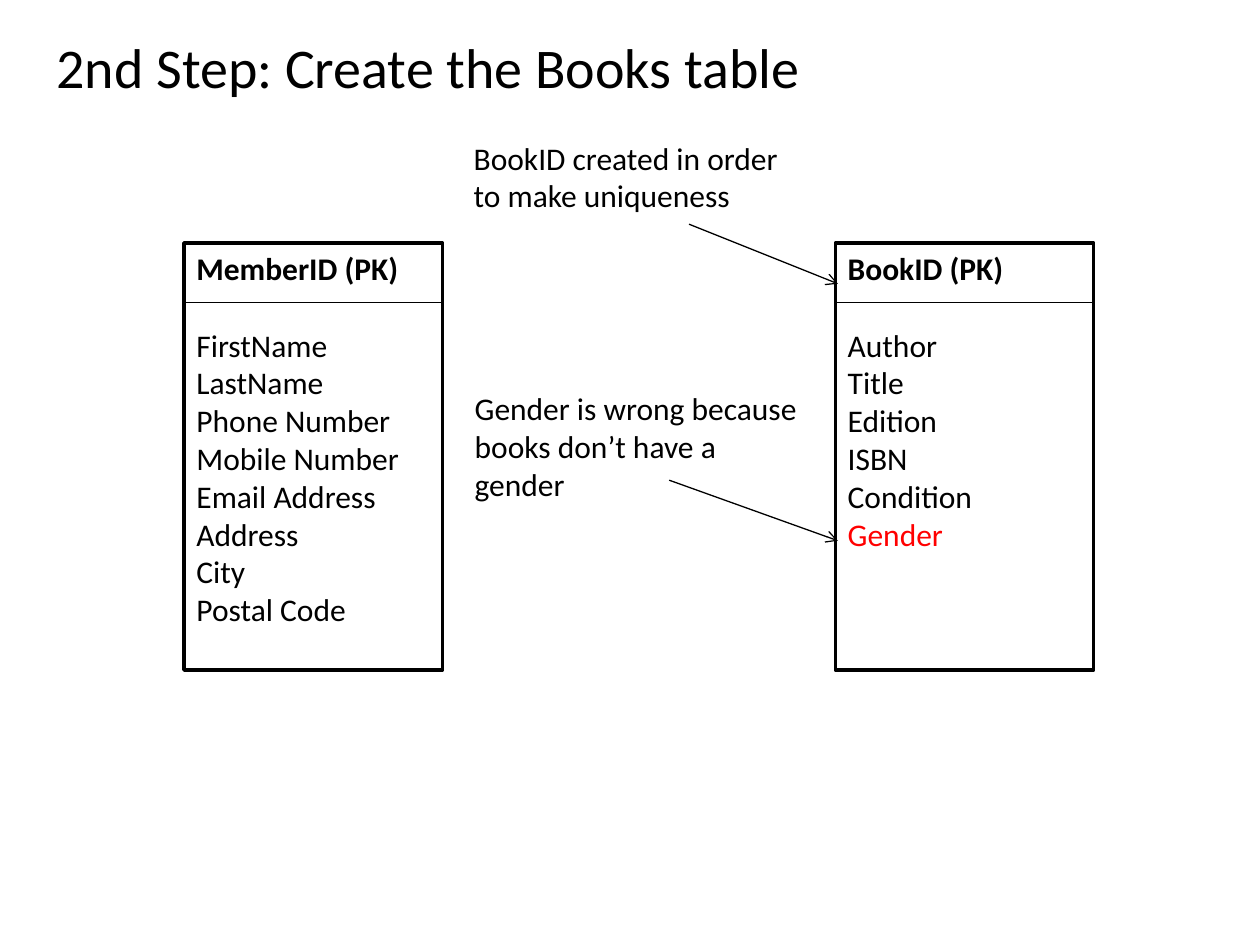
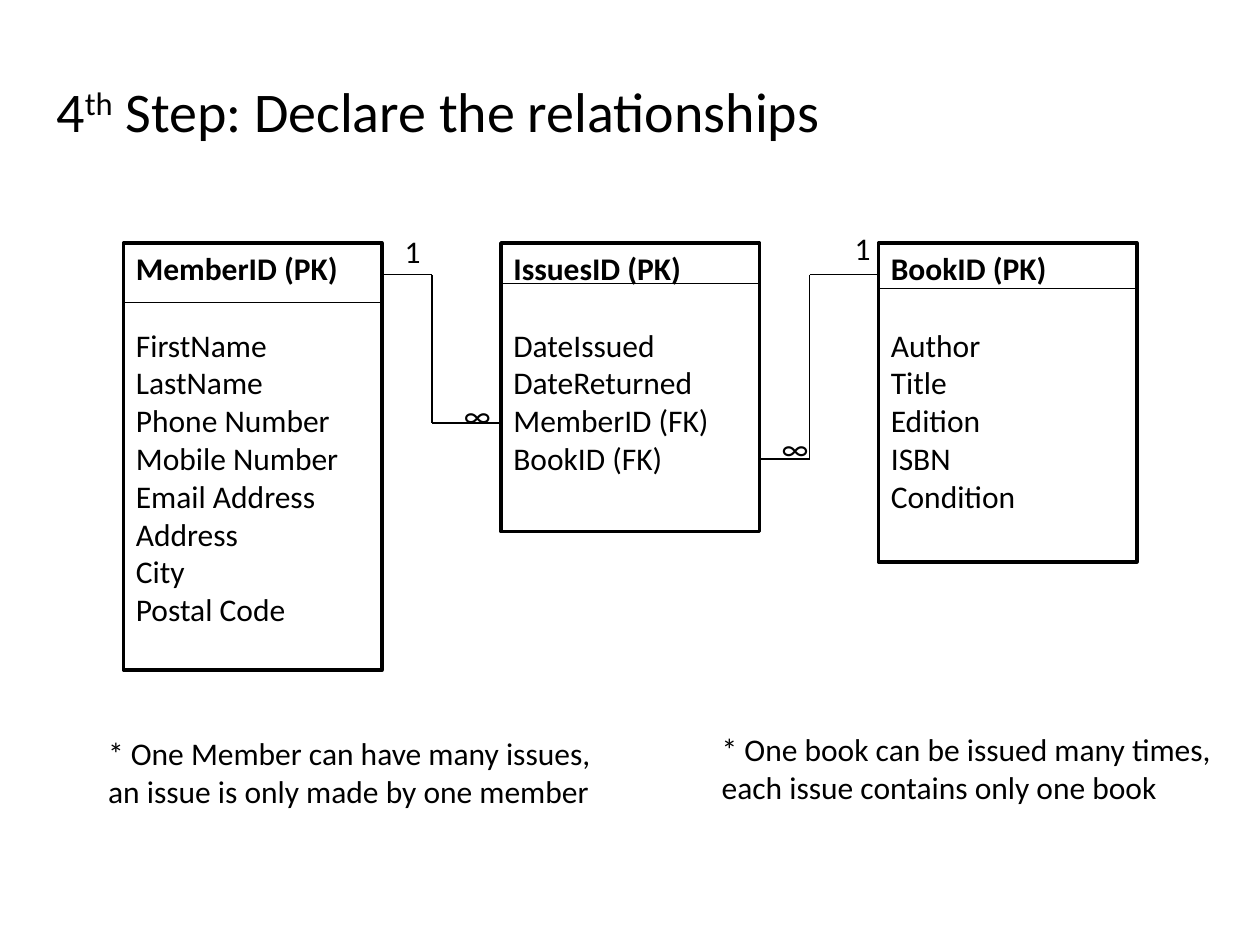
from dataclasses import dataclass
from itertools import pairwise

from lxml.etree import SubElement
from pptx import Presentation
from pptx.dml.color import RGBColor
from pptx.enum.shapes import MSO_CONNECTOR as CONN, MSO_SHAPE as SHAPE
from pptx.enum.text import MSO_ANCHOR as ANCHOR, MSO_AUTO_SIZE as AUTO, PP_ALIGN as ALIGN
from pptx.oxml.ns import qn
from pptx.util import Cm, Pt


@dataclass(frozen=True)
class Theme:
    font: str = "Calibri"
    title: Pt = Pt(32)
    body: Pt = Pt(18)
    blank_line: Pt = Pt(22)
    border: Pt = Pt(2)
    rule: Pt = Pt(0.75)
    ink: RGBColor = RGBColor(0, 0, 0)
    paper: RGBColor = RGBColor(255, 255, 255)
    wrong: RGBColor = RGBColor(255, 0, 0)


THEME = Theme()
ENTITY_TOP, ENTITY_WIDTH = 4.9, 5.21
MEMBER = ["MemberID (PK)", "FirstName", "LastName", "Phone Number", "Mobile Number",
          "Email Address", "Address", "City", "Postal Code"]
ISSUES = ["IssuesID (PK)", "DateIssued", "DateReturned", "MemberID (FK)", "BookID (FK)"]
BOOK = ["BookID (PK)", "Author", "Title", "Edition", "ISBN", "Condition"]


def style(p, size=THEME.body, color=THEME.ink, bold=False):
    p.font.name, p.font.size, p.font.bold = THEME.font, size, bold
    p.font.color.rgb = color


def add_text(slide, text, left, top, width, height):
    tf = slide.shapes.add_textbox(Cm(left), Cm(top), Cm(width), Cm(height)).text_frame
    tf.word_wrap = True
    tf.auto_size = AUTO.SHAPE_TO_FIT_TEXT
    p = tf.paragraphs[0]
    p.text = text
    style(p)


def add_title(slide, top, *parts):
    """Write the title; each part is a text and its superscript offset in percent."""
    tf = slide.shapes.add_textbox(Cm(0.89), Cm(top), Cm(22.86), Cm(2)).text_frame
    tf.word_wrap = True
    p = tf.paragraphs[0]
    for text, raised in parts:
        r = p.add_run()
        r.text = text
        if raised:
            r._r.get_or_add_rPr().set("baseline", str(raised * 1000))
    style(p, THEME.title)


def add_line(shapes, start, end, arrow=False):
    line = shapes.add_connector(CONN.STRAIGHT, *map(Cm, (*start, *end)))
    line.line.color.rgb, line.line.width = THEME.ink, THEME.rule
    if arrow:
        SubElement(line.line._get_or_add_ln(), qn("a:tailEnd"), type="arrow")
    SubElement(line._element.spPr, qn("a:effectLst"))


def add_entity(slide, names, left, height, key_height, wrong=()):
    """Draw a table box: the key above a divider, then the fields."""
    shapes = slide.shapes.add_group_shape().shapes
    sp = shapes.add_shape(SHAPE.RECTANGLE, Cm(left), Cm(ENTITY_TOP), Cm(ENTITY_WIDTH), Cm(height))
    sp.shadow.inherit = False
    sp.fill.solid()
    sp.fill.fore_color.rgb = THEME.paper
    sp.line.color.rgb, sp.line.width = THEME.ink, THEME.border
    tf = sp.text_frame
    tf.word_wrap, tf.vertical_anchor = True, ANCHOR.TOP
    for i, name in enumerate(names):
        p = tf.add_paragraph() if i else tf.paragraphs[0]
        p.text, p.alignment = name, ALIGN.LEFT
        if i == 1:
            p.space_before = THEME.blank_line
        style(p, color=THEME.wrong if name in wrong else THEME.ink, bold=i == 0)
    divider = ENTITY_TOP + key_height
    add_line(shapes, (left, divider), (left + ENTITY_WIDTH, divider))


def add_relationship(slide, left_entity, right_entity, start_y, end_y):
    """Join two neighbouring entities, given by their left edges, with a stepped line."""
    start_x = left_entity + ENTITY_WIDTH
    bend = start_x + 1.01
    corners = [(start_x, start_y), (bend, start_y), (bend, end_y), (right_entity, end_y)]
    for start, end in pairwise(corners):
        add_line(slide.shapes, start, end)


def build_books_slide(slide):
    add_title(slide, 0.53, ("2nd Step: Create the Books table", 0))
    add_entity(slide, MEMBER, 3.71, 8.61, 1.2)
    add_entity(slide, BOOK + ["Gender"], 16.84, 8.61, 1.2, wrong=["Gender"])
    add_text(slide, "BookID created in order to make uniqueness", 9.3, 2.67, 7, 1.8)
    add_line(slide.shapes, (13.89, 4.52), (16.89, 5.72), arrow=True)
    add_text(slide, "Gender is wrong because books don’t have a gender", 9.32, 7.72, 7, 2.57)
    add_line(slide.shapes, (13.49, 9.68), (16.89, 10.9), arrow=True)


def build_relationships_slide(slide):
    add_title(slide, 1.42, ("4", 0), ("th", 30), (" Step: Declare the relationships", 0))
    member, issues, book = (2.49 + 7.61 * i for i in range(3))
    add_entity(slide, MEMBER, member, 8.61, 1.2)
    add_entity(slide, BOOK, book, 6.43, 0.92)
    add_entity(slide, ISSUES, issues, 5.82, 0.82)
    add_relationship(slide, member, issues, 5.54, 8.53)
    add_relationship(slide, issues, book, 9.25, 5.54)
    for symbol, left, top in [("1", 8, 4.55), ("∞", 9.19, 7.85),
                              ("1", 17.07, 4.5), ("∞", 15.6, 8.53)]:
        add_text(slide, symbol, left, top, 0.41, 1.02)
    add_text(slide, "* One Member can have many issues, an issue is only made by one member",
             1.93, 14.68, 10.39, 1.8)
    add_text(slide, "* One book can be issued many times, each issue contains only one book",
             14.3, 14.6, 10.39, 1.8)


def main():
    prs = Presentation()
    prs.slide_width, prs.slide_height = Cm(25.4), Cm(19.05)
    for build in (build_books_slide, build_relationships_slide):
        build(prs.slides.add_slide(prs.slide_layouts[6]))
    prs.save("out.pptx")


if __name__ == "__main__":
    main()
